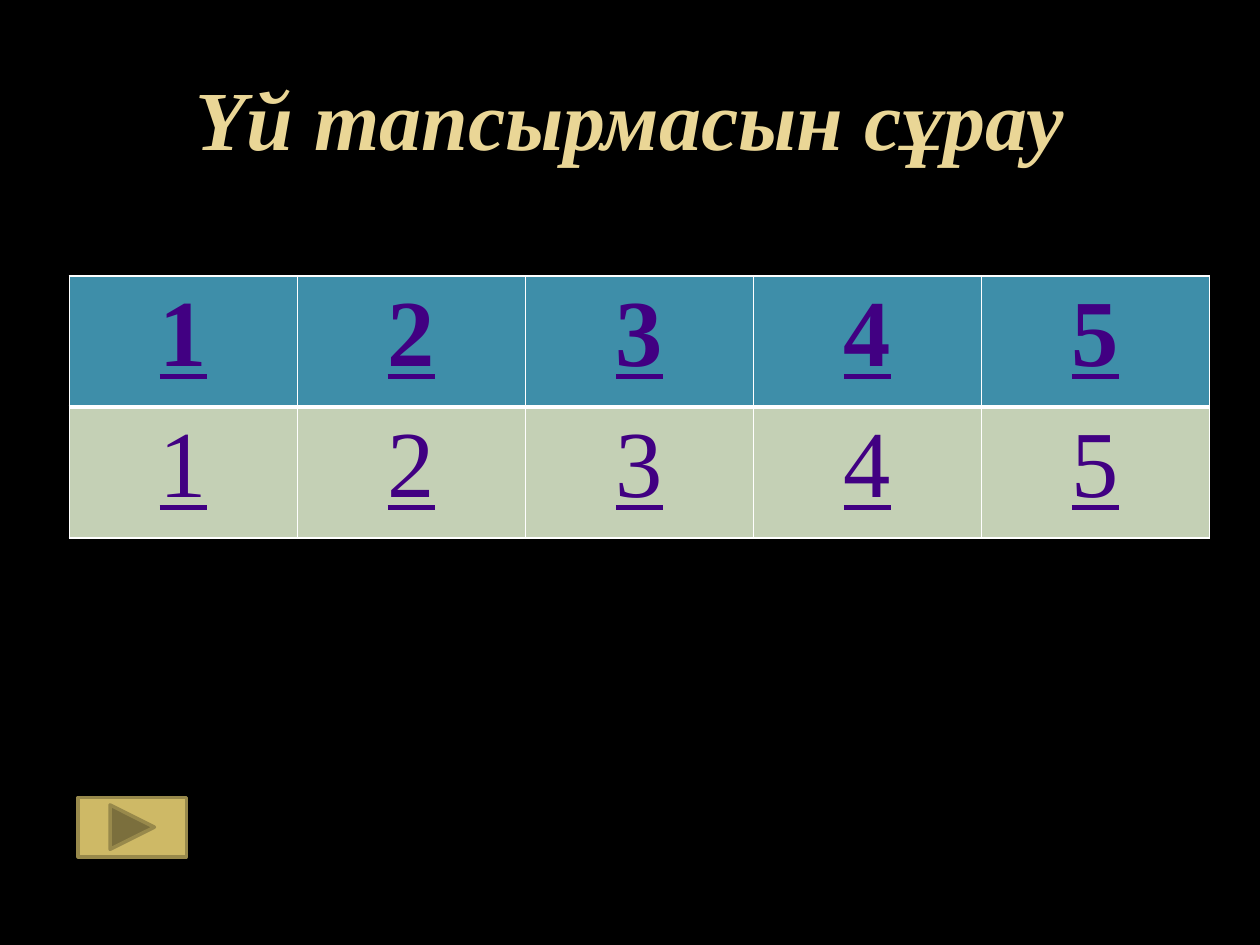
from lxml.etree import SubElement
from pptx import Presentation
from pptx.dml.color import RGBColor
from pptx.enum.shapes import MSO_SHAPE
from pptx.enum.text import MSO_ANCHOR, PP_ALIGN
from pptx.oxml.ns import qn
from pptx.util import Inches, Pt

FONT = "Times New Roman"
COLORS = {
    "background": "000000",
    "title": "EAD696",
    "number": "410082",
    "header": "3E8EA9",
    "body": "C4D0B5",
    "border": "FFFFFF",
    "button": "CEB966",
    "button_line": "98894B",
}
COLS, ROWS = 5, 2
COL_W, ROW_H = 1.81, 1.04


def rgb(name):
    return RGBColor.from_string(COLORS[name])


def add_run(p, text, size, color, bold=False, italic=False, underline=False):
    p.alignment = PP_ALIGN.CENTER
    r = p.add_run()
    r.text = text
    f = r.font
    f.name, f.size = FONT, Pt(size)
    f.bold, f.italic, f.underline = bold, italic, underline
    f.color.rgb = rgb(color)


def set_title(s, text):
    sp = s.shapes.title
    sp.left, sp.top = Inches(0.5), Inches(0.3)
    sp.width, sp.height = Inches(9), Inches(1.25)
    tf = sp.text_frame
    tf.word_wrap = True
    tf.vertical_anchor = MSO_ANCHOR.MIDDLE
    add_run(tf.paragraphs[0], text, 48, "title", bold=True, italic=True)


def set_borders(cell, top, bottom):
    tcPr = cell._tc.get_or_add_tcPr()
    for side, width in (("L", 1), ("R", 1), ("T", top), ("B", bottom)):
        ln = SubElement(tcPr, qn(f"a:ln{side}"), w=str(Pt(width)))
        fill = SubElement(ln, qn("a:solidFill"))
        SubElement(fill, qn("a:srgbClr"), val=COLORS["border"])


def add_number_table(s):
    table = s.shapes.add_table(
        ROWS, COLS, Inches(0.55), Inches(2.19),
        Inches(COLS * COL_W), Inches(ROWS * ROW_H)).table
    for col in table.columns:
        col.width = Inches(COL_W)
    for i, row in enumerate(table.rows):
        row.height = Inches(ROW_H)
        header = i == 0
        for number, cell in enumerate(row.cells, 1):
            # A thick rule parts the header from the body
            set_borders(cell, top=1 if header else 3, bottom=3 if header else 1)
            cell.fill.solid()
            cell.fill.fore_color.rgb = rgb("header" if header else "body")
            add_run(cell.text_frame.paragraphs[0], str(number), 54, "number",
                    bold=header, underline=True)


def add_next_button(s):
    sp = s.shapes.add_shape(MSO_SHAPE.ACTION_BUTTON_FORWARD_OR_NEXT,
                            Inches(0.62), Inches(6.33), Inches(0.86), Inches(0.47))
    sp.shadow.inherit = False
    sp.fill.solid()
    sp.fill.fore_color.rgb = rgb("button")
    sp.line.color.rgb = rgb("button_line")
    sp.line.width = Pt(2)


def main():
    prs = Presentation()
    prs.slide_width, prs.slide_height = Inches(10), Inches(7.5)
    s = prs.slides.add_slide(prs.slide_layouts[5])
    s.background.fill.solid()
    s.background.fill.fore_color.rgb = rgb("background")

    set_title(s, "Үй тапсырмасын сұрау")
    add_number_table(s)
    add_next_button(s)
    prs.save("out.pptx")


if __name__ == "__main__":
    main()
